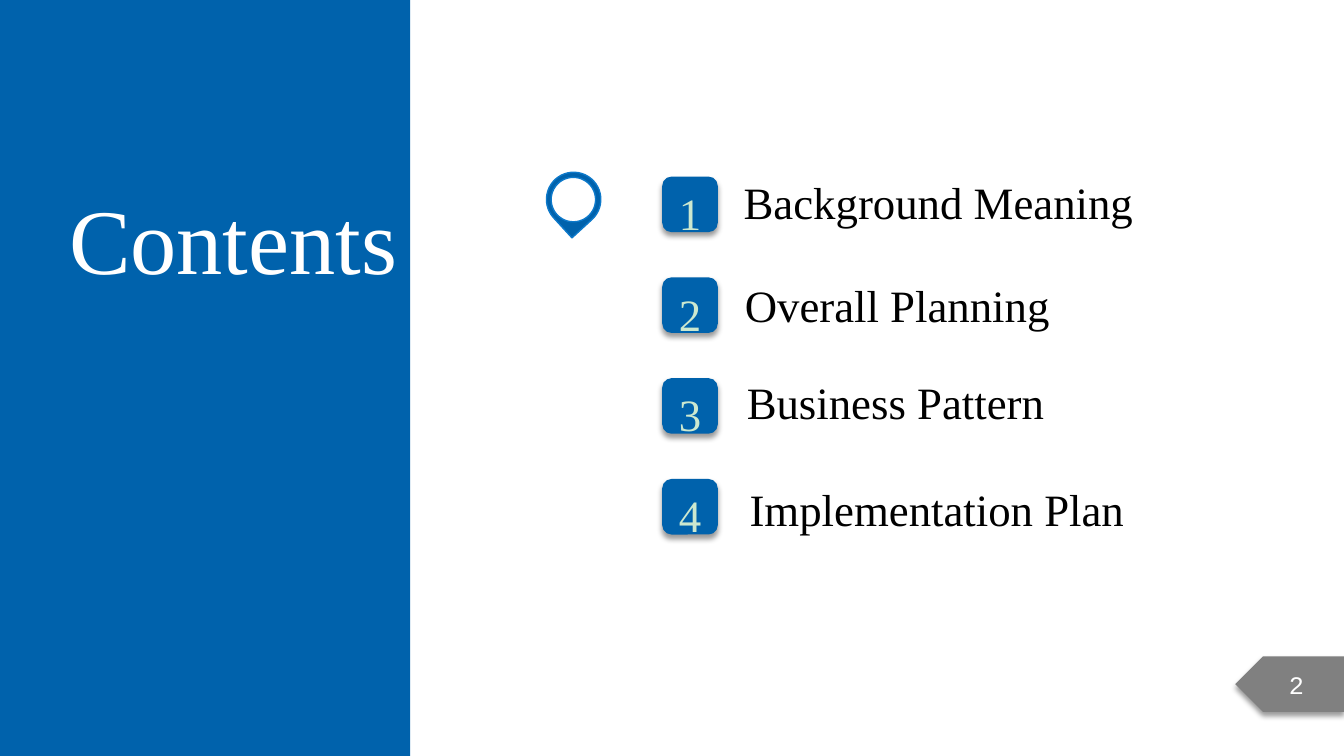
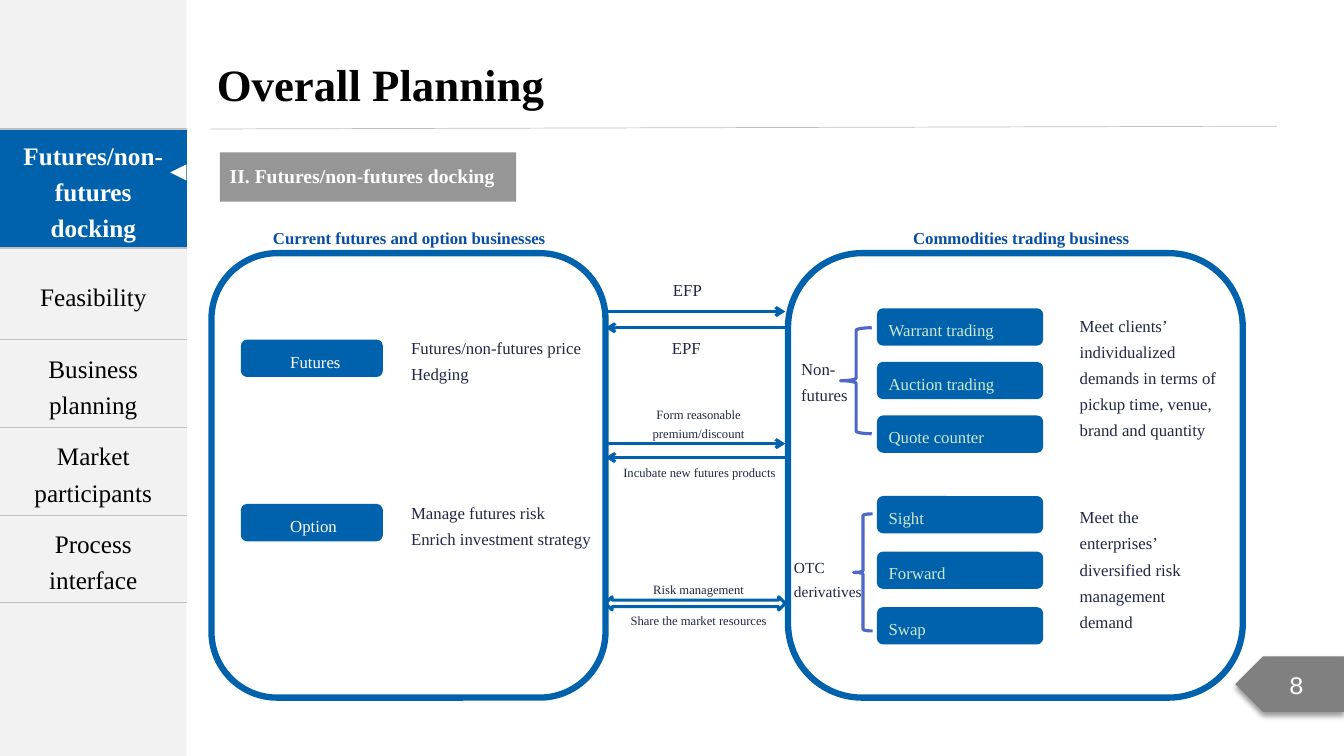
import pptx
import pptx.dml.color
import pptx.enum.shapes
import pptx.enum.text
import pptx.oxml
import pptx.oxml.ns
import pptx.util

Cm = pptx.util.Cm
Pt = pptx.util.Pt
SHAPE = pptx.enum.shapes.MSO_SHAPE
ALIGN = pptx.enum.text.PP_ALIGN
ANCHOR = pptx.enum.text.MSO_ANCHOR

WIDTH, HEIGHT = 33.87, 19.05
BLUE, RING, HEADING, BRACE = "0062AC", "0D79CA", "084EA6", "4E67C8"
WHITE, PALE, BLACK, INK = "FFFFFF", "CCE8CF", "000000", "212745"
RAIL, RULE, GREY = "F2F2F2", "BFBFBF", "808080"
SERIF, MONO = "Times New Roman", "Courier New"
LINE_SPACING = 1.3


def rgb(value):
    return pptx.dml.color.RGBColor.from_string(value)


def xml(text):
    return pptx.oxml.parse_xml(text.replace(">", f" {pptx.oxml.ns.nsdecls('a')}>", 1))


def write(frame, lines, size, color, align=ALIGN.JUSTIFY, bold=False,
          font=SERIF, spacing=LINE_SPACING):
    """Fill a text frame with one paragraph for each line."""
    for index, line in enumerate(lines.split("\n")):
        para = frame.paragraphs[0] if index == 0 else frame.add_paragraph()
        para.text = line
        para.alignment = align
        para.line_spacing = spacing
        para.font.name = font
        para.font.size = Pt(size)
        para.font.bold = bold
        para.font.color.rgb = rgb(color)


def add_text(page, place, lines, size, color, **style):
    box = page.shapes.add_textbox(*map(Cm, place))
    box.text_frame.word_wrap = True
    write(box.text_frame, lines, size, color, **style)
    return box


def add_shape(parent, kind, place, fill=None, line=None, line_width=1):
    shape = parent.shapes.add_shape(kind, *map(Cm, place))
    shape.shadow.inherit = False
    if fill:
        shape.fill.solid()
        shape.fill.fore_color.rgb = rgb(fill)
    else:
        shape.fill.background()
    if line:
        shape.line.color.rgb = rgb(line)
        shape.line.width = Pt(line_width)
    else:
        shape.line.fill.background()
    return shape


def add_line(page, start, end, color, width, arrow=False):
    line = page.shapes.add_connector(
        pptx.enum.shapes.MSO_CONNECTOR.STRAIGHT, *map(Cm, start + end))
    line.line.color.rgb = rgb(color)
    line.line.width = Pt(width)
    if arrow:
        line.line._get_or_add_ln().append(xml('<a:tailEnd type="arrow"/>'.replace("/>", "></a:tailEnd>")))
    line._element.spPr.append(xml("<a:effectLst></a:effectLst>"))


def drop_shadow(shape):
    effects = shape._element.spPr.find(pptx.oxml.ns.qn("a:effectLst"))
    effects.append(xml(
        '<a:outerShdw blurRad="50800" dist="38100" dir="5400000" rotWithShape="0">'
        '<a:srgbClr val="000000"><a:alpha val="40000"/></a:srgbClr></a:outerShdw>'))


def set_title(page, place, text, size, color, **style):
    title = page.shapes.title
    title.left, title.top, title.width, title.height = map(Cm, place)
    frame = title.text_frame
    frame.word_wrap = True
    frame.auto_size = pptx.enum.text.MSO_AUTO_SIZE.NONE
    frame.vertical_anchor = ANCHOR.TOP
    write(frame, text, size, color, **style)


def add_page_tag(page, number):
    tag = add_shape(page, SHAPE.PENTAGON, (31.13, 16.54, 2.74, 1.4), GREY)
    tag._element.spPr.xfrm.set("flipH", "1")
    drop_shadow(tag)
    tag.text_frame.vertical_anchor = ANCHOR.MIDDLE
    write(tag.text_frame, number, 18, WHITE, align=ALIGN.CENTER, font=MONO, spacing=1)


def add_button(page, left, top, width, text, color, inset=0.25):
    button = add_shape(page, SHAPE.ROUNDED_RECTANGLE, (left, top, width, 0.94), BLUE)
    frame = button.text_frame
    frame.margin_left = Cm(inset)
    frame.vertical_anchor = ANCHOR.MIDDLE
    write(frame, text, 12, color)


def add_frame(page, place, heading, heading_shift):
    left, top, width, height = place
    add_shape(page, SHAPE.ROUNDED_RECTANGLE, place, line=BLUE, line_width=4.5)
    add_text(page, (left + heading_shift, top - 0.93, 8, 0.91),
             heading, 12, HEADING, bold=True)


def add_pin(page, left, top):
    pin = page.shapes.add_group_shape()
    drop = add_shape(pin, SHAPE.TEAR, (left, top, 1.37, 1.37), BLUE, RING)
    drop.rotation = 137.5
    add_shape(pin, SHAPE.OVAL, (left + 0.12, top + 0.13, 1.12, 1.12), WHITE, RING)


def add_chapters(page, left, top, chapters):
    for index, (name, shift, drop) in enumerate(chapters):
        row = top + 2.54 * index
        badge = add_shape(page, SHAPE.ROUNDED_RECTANGLE, (left, row, 1.4, 1.4), BLUE)
        drop_shadow(badge)
        badge.text_frame.vertical_anchor = ANCHOR.MIDDLE
        write(badge.text_frame, str(index + 1), 32, PALE, align=ALIGN.CENTER)
        add_text(page, (left + shift, row + drop, 12.98, 1.63), name, 32, BLACK,
                 align=ALIGN.LEFT, spacing=1)


def contents_slide(deck):
    page = deck.slides.add_slide(deck.slide_layouts[5])
    panel = add_shape(page, SHAPE.RECTANGLE, (0, 0, 10.34, HEIGHT), BLUE)
    page.shapes._spTree.insert(2, panel._element)
    set_title(page, (1.45, 3.63, 8.86, 3.91), "Contents", 66, WHITE, align=ALIGN.CENTER)
    add_pin(page, 13.77, 4.34)
    add_chapters(page, 16.69, 4.45, [
        ("Background Meaning", 1.8, -0.18),
        ("Overall Planning", 1.83, -0.11),
        ("Business Pattern", 1.88, -0.21),
        ("Implementation Plan", 1.95, -0.06),
    ])
    add_page_tag(page, "2")


def add_section_rail(page, width, top, sections):
    """Draw the side rail with its section list, the first one active."""
    add_shape(page, SHAPE.RECTANGLE, (0, 0, width, HEIGHT), RAIL)
    heights = [3, 2.31, 2.21, 2.21, 2.21]
    holder = page.shapes.add_table(
        len(sections), 1, *map(Cm, (0, top, width, sum(heights))))
    table = holder.table
    table.first_row = table.horz_banding = False
    table.columns[0].width = Cm(width)
    for index, name in enumerate(sections):
        active = index == 0
        table.rows[index].height = Cm(heights[index])
        cell = table.cell(index, 0)
        cell.vertical_anchor = ANCHOR.MIDDLE
        write(cell.text_frame, name, 18, WHITE if active else BLACK,
              align=ALIGN.CENTER, bold=active)
        borders = cell._tc.get_or_add_tcPr()
        for side in ("lnL", "lnR"):
            borders.append(xml(f'<a:{side} w="0"><a:noFill/></a:{side}>'))
        for side in ("lnT", "lnB"):
            borders.append(xml(
                f'<a:{side} w="12700"><a:solidFill><a:srgbClr val="{RULE}"/>'
                f'</a:solidFill></a:{side}>'))
        cell.fill.solid()
        cell.fill.fore_color.rgb = rgb(BLUE if active else RAIL)
    notch = add_shape(page, SHAPE.ISOSCELES_TRIANGLE,
                      (width - 0.41, top + 0.89, 0.41, 0.41), WHITE)
    notch.rotation = 270


def add_banner(page, place, text):
    banner = add_shape(page, SHAPE.RECTANGLE, place, GREY)
    color = banner._element.spPr.find(".//" + pptx.oxml.ns.qn("a:srgbClr"))
    color.append(xml('<a:alpha val="82000"></a:alpha>'))
    banner.text_frame.vertical_anchor = ANCHOR.TOP
    write(banner.text_frame, text, 14, WHITE, bold=True)


def add_current_business(page, place):
    left, top = place[:2]
    add_frame(page, place, "Current futures and option businesses", 1.3)
    for drop, name, note in [
        (2.18, "Futures", "Futures/non-futures price\nHedging"),
        (6.32, "Option", "Manage futures risk\nEnrich investment strategy"),
    ]:
        add_button(page, left + 0.74, top + drop, 3.58, name, WHITE, inset=1.2)
        add_text(page, (left + 4.78, top + drop - 0.32, 5.2, 1.6), note, 12, INK)


def add_trading_group(page, left, top, pitch, names, brace, label, note):
    """Draw three buttons at left, top with brace and label before, note after."""
    for index, name in enumerate(names):
        add_button(page, left, top + pitch * index, 4.19, name, PALE)
    brace_left, brace_top, brace_width, brace_height = brace
    add_shape(page, SHAPE.LEFT_BRACE,
              (left + brace_left, top + brace_top, brace_width, brace_height),
              line=BRACE, line_width=2.25)
    text, size, shift, drop = label
    add_text(page, (left + shift, top + drop, 2.67, 1.5), text, size, INK)
    text, width, drop = note
    add_text(page, (left + 4.86, top + drop, width, 3.58), text, 12, INK,
             align=ALIGN.LEFT)


def add_commodities_business(page, place):
    left, top = place[:2]
    add_frame(page, place, "Commodities trading business", 2.9)
    add_trading_group(
        page, left + 2.24, top + 1.39, 1.35,
        ["Warrant trading", "Auction trading", "Quote counter"],
        (-0.92, 0.49, 0.79, 2.67), ("Non-\nfutures", 12, -2.16, 0.99),
        ("Meet clients’ individualized demands in terms of pickup time, "
         "venue, brand and quantity", 3.99, -0.1))
    add_trading_group(
        page, left + 2.24, top + 6.12, 1.4, ["Sight", "Forward", "Swap"],
        (-0.59, 0.45, 0.48, 2.95), ("OTC derivatives", 11, -2.34, 1.29),
        ("Meet the enterprises’ diversified risk management demand", 3.89, 0))


def add_exchanges(page, left, top, width):
    """Draw the arrows and captions in the gap between the two businesses."""
    right = left + width
    for drop, forward in [(1.47, True), (1.88, False), (4.8, True), (5.15, False)]:
        ends = [(left, top + drop), (right, top + drop)]
        start, end = ends if forward else ends[::-1]
        add_line(page, start, end, BLUE, 2.25, arrow=True)
    add_shape(page, SHAPE.LEFT_RIGHT_ARROW, (left, top + 8.66, width, 0.33),
              line=BLUE, line_width=2.25)
    for text, size, shift, drop in [
        ("EFP", 12, -0.2, 0.4),
        ("EPF", 12, -0.23, 1.85),
        ("Form reasonable premium/discount", 9, 0.08, 3.63),
        ("Incubate new futures products", 9, 0.1, 5.1),
        ("Risk management", 9, 0.08, 8.05),
        ("Share the market resources", 9, 0.08, 8.83),
    ]:
        add_text(page, (left + shift, top + drop, width, 0.8), text, size, INK,
                 align=ALIGN.CENTER)


def planning_slide(deck):
    page = deck.slides.add_slide(deck.slide_layouts[5])
    add_section_rail(page, 4.7, 3.25, [
        "Futures/non-futures docking", "Feasibility", "Business planning",
        "Market participants", "Process interface"])
    add_line(page, (5.31, 3.25), (32.18, 3.18), RULE, 0.5)
    set_title(page, (5.21, 1.3, 10.97, 1.63), "Overall Planning", 32, BLACK,
              align=ALIGN.LEFT, bold=True, spacing=1)
    add_banner(page, (5.54, 3.84, 7.47, 1.24), "II. Futures/non-futures docking")
    add_current_business(page, (5.33, 6.38, 9.93, 11.2))
    add_commodities_business(page, (19.86, 6.38, 11.46, 11.2))
    add_exchanges(page, 15.26, 6.38, 4.53)
    add_page_tag(page, "8")


def main():
    deck = pptx.Presentation()
    deck.slide_width, deck.slide_height = Cm(WIDTH), Cm(HEIGHT)
    contents_slide(deck)
    planning_slide(deck)
    deck.save("out.pptx")


if __name__ == "__main__":
    main()
